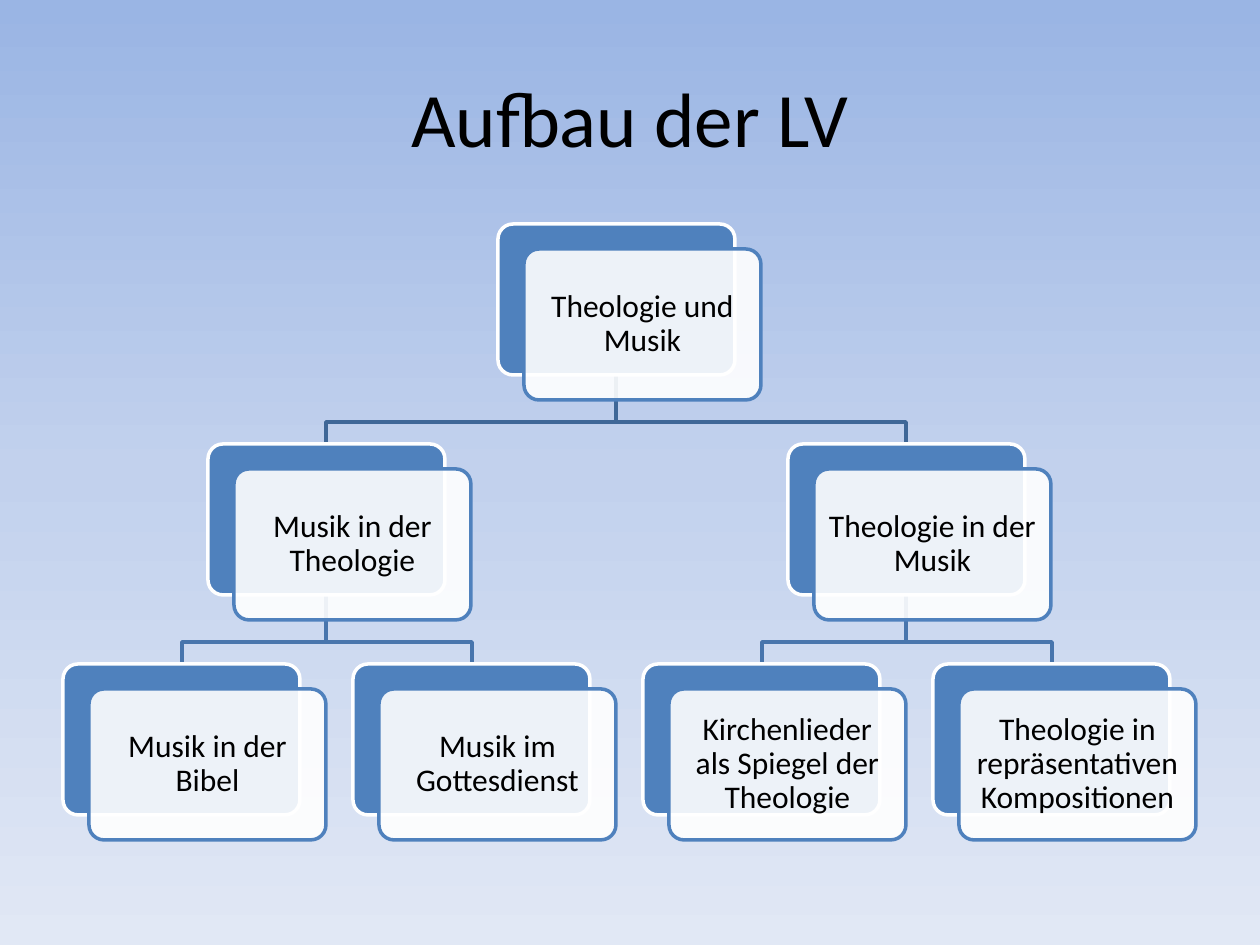
from copy import deepcopy

from pptx import Presentation
from pptx import util as u
from pptx.dml.color import RGBColor
from pptx.enum import shapes, text
from pptx.oxml import ns
from lxml import etree

PX = 914400 / 126  # EMU in one px

BLUE = RGBColor(0x4F, 0x81, 0xBD)
WHITE = RGBColor(0xFF, 0xFF, 0xFF)
BLACK = RGBColor(0x00, 0x00, 0x00)
LINK_COLORS = [RGBColor(0x3F, 0x67, 0x97), RGBColor(0x48, 0x75, 0xAC)]
SKY = [RGBColor(0x9A, 0xB5, 0xE4), RGBColor(0xC2, 0xD1, 0xED), RGBColor(0xE1, 0xE8, 0xF5)]

FONT = "Calibri"
CARD_WIDTH, CARD_HEIGHT = 237, 151
CARD_SHIFT_X, CARD_SHIFT_Y = 26, 25
COLUMN_STEP, ROW_STEP = 290, 220
BEND = 47  # from the lower edge of a parent to the bend of its links

LEVELS = [
    ["Theologie und Musik"],
    ["Musik in der Theologie", "Theologie in der Musik"],
    ["Musik in der Bibel", "Musik im Gottesdienst",
     "Kirchenlieder als Spiegel der Theologie",
     "Theologie in repräsentativen Kompositionen"],
]


def px(length):
    return u.Emu(round(length * PX))


def paint_background(slide):
    fill = slide.background.fill
    fill.gradient()
    fill.gradient_angle = 270
    # A new gradient has two stops; a third goes in the middle
    stop_list = slide.element.find(".//" + ns.qn("a:gsLst"))
    stop_list.insert(1, deepcopy(stop_list[0]))
    for stop, position, color in zip(fill.gradient_stops, (0, 0.5, 1), SKY):
        stop.position = position
        stop.color.rgb = color


def format_paragraph(paragraph, size):
    paragraph.alignment = text.PP_ALIGN.CENTER
    paragraph.font.name = FONT
    paragraph.font.size = u.Pt(size)
    paragraph.font.color.rgb = BLACK


def place_title(slide, wording, left, top, width, height):
    title = slide.shapes.title
    title.left, title.top, title.width, title.height = map(px, (left, top, width, height))
    title.text_frame.text = wording
    title.text_frame.vertical_anchor = text.MSO_ANCHOR.MIDDLE
    format_paragraph(title.text_frame.paragraphs[0], 44)


def add_panel(slide, left, top, fill_color, line_color):
    panel = slide.shapes.add_shape(
        shapes.MSO_SHAPE.ROUNDED_RECTANGLE,
        px(left), px(top), px(CARD_WIDTH), px(CARD_HEIGHT))
    panel.adjustments[0] = 0.1
    panel.shadow.inherit = False
    panel.fill.solid()
    panel.fill.fore_color.rgb = fill_color
    panel.line.color.rgb = line_color
    panel.line.width = u.Pt(2)
    return panel


def add_card(slide, wording, left, top):
    add_panel(slide, left, top, BLUE, WHITE)
    front = add_panel(slide, left + CARD_SHIFT_X, top + CARD_SHIFT_Y, WHITE, BLUE)
    # Let the back panel shine through
    color = front.fill._xPr.find(ns.qn("a:solidFill"))[0]
    etree.SubElement(color, ns.qn("a:alpha"), val="90000")

    frame = front.text_frame
    frame.word_wrap = True
    frame.vertical_anchor = text.MSO_ANCHOR.MIDDLE
    frame.margin_left = frame.margin_right = px(9)
    frame.margin_top = frame.margin_bottom = px(9)
    frame.text = wording
    paragraph = frame.paragraphs[0]
    paragraph.line_spacing = 0.9
    format_paragraph(paragraph, 18)


def add_link(slide, parent, child, color):
    start_x, end_x = (left + CARD_WIDTH / 2 for left in (parent[0], child[0]))
    start_y = parent[1] + CARD_HEIGHT
    builder = slide.shapes.build_freeform(start_x, start_y, scale=PX)
    builder.add_line_segments(
        [(start_x, start_y + BEND), (end_x, start_y + BEND), (end_x, child[1])],
        close=False)
    link = builder.convert_to_shape()
    link.shadow.inherit = False
    link.fill.background()
    link.line.color.rgb = color
    link.line.width = u.Pt(2)


def draw_tree(slide, levels, left, top):
    # Each parent is centred over its two children
    places = []
    for depth, level in enumerate(levels):
        span = 2 ** (len(levels) - 1 - depth)
        places.append([
            (left + COLUMN_STEP * (index * span + (span - 1) / 2), top + ROW_STEP * depth)
            for index in range(len(level))])

    # Links lie behind the cards
    for parents, children, color in zip(places, places[1:], LINK_COLORS):
        for index, child in enumerate(children):
            add_link(slide, parents[index // 2], child, color)

    for level, spots in zip(levels, places):
        for wording, spot in zip(level, spots):
            add_card(slide, wording, *spot)


def main():
    presentation = Presentation()
    presentation.slide_width, presentation.slide_height = px(1260), px(945)
    slide = presentation.slides.add_slide(presentation.slide_layouts[5])
    paint_background(slide)
    place_title(slide, "Aufbau der LV", 63, 38, 1134, 157)
    draw_tree(slide, LEVELS, 63, 224)
    presentation.save("out.pptx")


if __name__ == "__main__":
    main()
